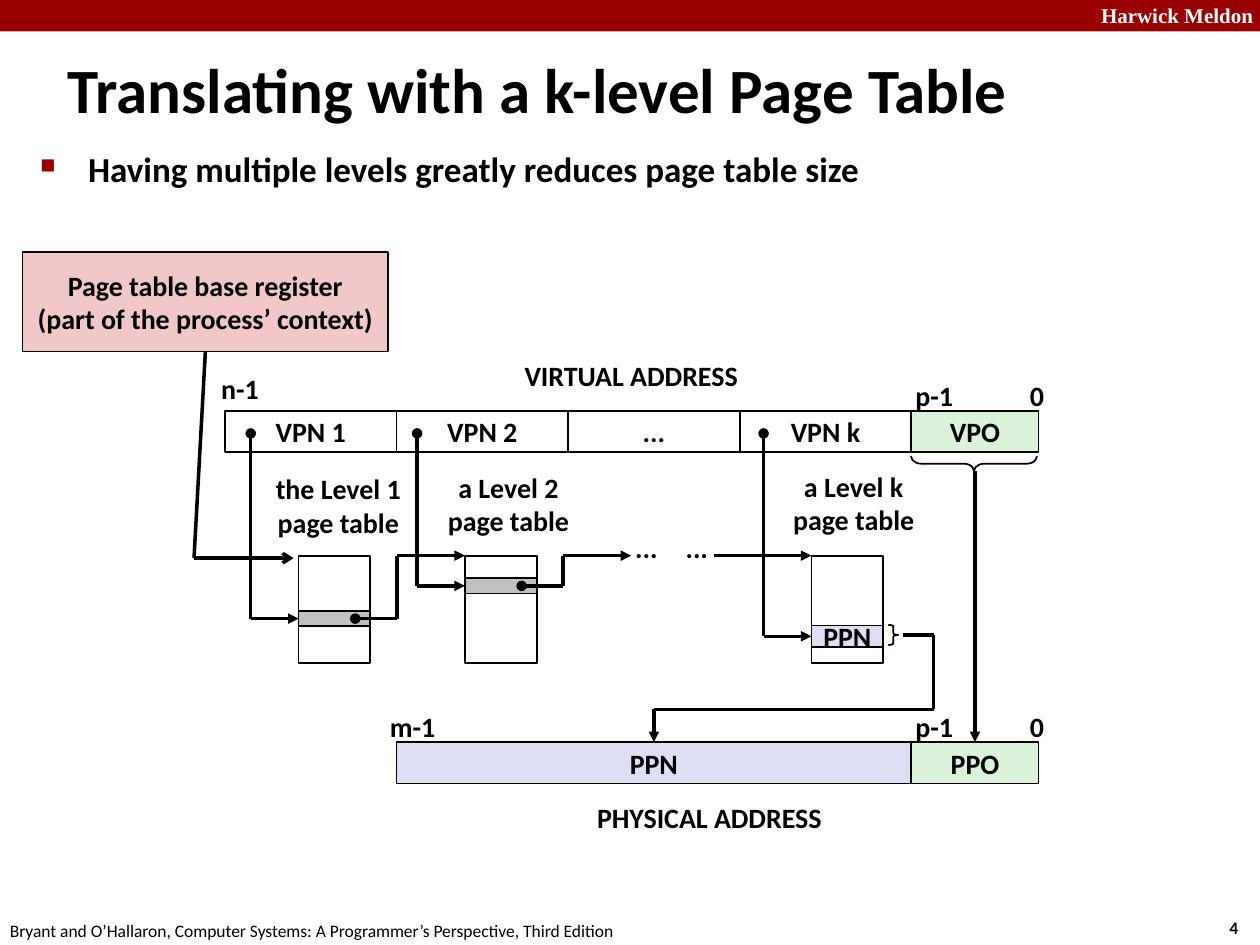
from lxml.etree import SubElement
from pptx import Presentation
from pptx.dml.color import RGBColor as RGB
from pptx.enum.shapes import MSO_CONNECTOR as Link, MSO_SHAPE as Shape
from pptx.enum.text import MSO_ANCHOR as Anchor, PP_ALIGN as Align
from pptx.oxml.ns import qn
from pptx.util import Inches, Pt

BLACK = RGB(0x00, 0x00, 0x00)
WHITE = RGB(0xFF, 0xFF, 0xFF)
RED = RGB(0x99, 0x00, 0x00)
PINK = RGB(0xF1, 0xC7, 0xC7)
GREEN = RGB(0xDB, 0xF2, 0xDA)
LILAC = RGB(0xDE, 0xDF, 0xF5)
GRAY = RGB(0xC0, 0xC0, 0xC0)

COLS, ROWS = 100, 75
TOP, LEFT, BOTTOM = 0, 1, 2


def write(frame, text, size=16, bold=True, color=BLACK, font="Calibri",
          align=Align.CENTER, anchor=Anchor.MIDDLE, wrap=False):
    """Fill a text frame, one paragraph to a line of text."""
    frame.word_wrap = wrap
    frame.vertical_anchor = anchor
    for i, line in enumerate(text.split("\n")):
        par = frame.paragraphs[0] if i == 0 else frame.add_paragraph()
        par.alignment = align
        run = par.add_run()
        run.text = line
        run.font.size, run.font.bold, run.font.name = Pt(size), bold, font
        run.font.color.rgb = color


def mark(par, char, color, size, indent):
    """Give a paragraph a hanging bullet; size is a percentage."""
    props = par._p.get_or_add_pPr()
    props.set("marL", str(indent))
    props.set("indent", str(-indent))
    tint = SubElement(props, qn("a:buClr"))
    SubElement(tint, qn("a:srgbClr"), val=str(color))
    SubElement(props, qn("a:buSzPct"), val=str(size * 1000))
    SubElement(props, qn("a:buChar"), char=char)


class Board:
    """Draws on one slide; every length is in grid columns and rows."""

    def __init__(self, deck):
        self.slide = deck.slides.add_slide(deck.slide_layouts[6])
        self.shapes = self.slide.shapes
        self.col = deck.slide_width / COLS
        self.row = deck.slide_height / ROWS

    def place(self, x, y, *size):
        spot = [x, y, *size]
        units = [self.col, self.row] * 2
        return [round(n * unit) for n, unit in zip(spot, units)]

    def box(self, x, y, w, h, text="", fill=None, line=BLACK,
            kind=Shape.RECTANGLE):
        item = self.shapes.add_shape(kind, *self.place(x, y, w, h))
        item.shadow.inherit = False
        if fill is None:
            item.fill.background()
        else:
            item.fill.solid()
            item.fill.fore_color.rgb = fill
        if line is None:
            item.line.fill.background()
        else:
            item.line.color.rgb = line
            item.line.width = Pt(1)
        if text:
            write(item.text_frame, text)
        return item

    def brace(self, x, y, w, h, curve, turn=0):
        item = self.box(x, y, w, h, kind=Shape.RIGHT_BRACE)
        item.adjustments[0] = curve
        item.rotation = turn

    def label(self, x, y, w, h, text, **style):
        item = self.shapes.add_textbox(*self.place(x, y, w, h))
        write(item.text_frame, text, **style)
        return item.text_frame

    def route(self, *points, head=None, tail=None, start=None, end=None):
        """Link points by straight lines; start and end are (shape, site)."""
        last = len(points) - 2
        for i, (a, b) in enumerate(zip(points, points[1:])):
            wire = self.shapes.add_connector(
                Link.STRAIGHT, *self.place(*a), *self.place(*b))
            wire.line.color.rgb = BLACK
            wire.line.width = Pt(2)
            if i == 0 and start:
                wire.begin_connect(*start)
            if i == last and end:
                wire.end_connect(*end)
            props = wire._element.spPr
            if i == 0 and head:
                SubElement(props.find(qn("a:ln")), qn("a:headEnd"), type=head)
            if i == last and tail:
                SubElement(props.find(qn("a:ln")), qn("a:tailEnd"), type=tail)
            SubElement(props, qn("a:effectLst"))


def frame(board):
    left = {"align": Align.LEFT}
    board.box(0, 0, 100, 2.5, fill=RED, line=None)
    board.label(86.4, -0.3, 14.3, 3, "Harwick Meldon", size=12, color=WHITE,
                font="Times New Roman", anchor=Anchor.TOP, **left)
    board.label(96.6, 72.3, 3.7, 2.7, "4", size=10, anchor=Anchor.TOP, **left)
    board.label(-0.2, 72.5, 50.8, 2.7,
                "Bryant and O’Hallaron, Computer Systems: "
                "A Programmer’s Perspective, Third Edition",
                size=10, bold=False, anchor=Anchor.TOP, **left)
    board.label(4.4, 2.7, 90.6, 8.6, "Translating with a k-level Page Table",
                size=36, wrap=True, **left)
    body = board.label(2.2, 11.8, 95.8, 9.2,
                       "Having multiple levels greatly reduces page table size",
                       size=20, wrap=True, anchor=Anchor.TOP, **left)
    par = body.paragraphs[0]
    par.line_spacing, par.space_before = 0.83, Pt(12)
    mark(par, "■", RED, 60, Inches(0.38))


def addresses(board):
    """Draw both address bars; return the physical page and offset cells."""
    start, step, high = 17.85, 13.62, 3.3
    split = start + 4 * step
    for i, name in enumerate(["VPN 1", "VPN 2", "...", "VPN k"]):
        board.box(start + i * step, 32.6, step, high, name)
    board.box(split, 32.6, 10.1, high, "VPO", GREEN)
    offset = board.box(split, 58.9, 10.1, high, "PPO", GREEN)
    page = board.box(start + step, 58.9, 3 * step, high, "PPN", LILAC)
    for y in (29.5, 55.8):
        board.label(80.7, y, 3.2, 3.7, "0")
        board.label(71.6, y, 5.1, 3.7, "p-1")
    board.label(16.5, 29, 5.1, 3.7, "n-1")
    board.label(29.9, 55.8, 5.7, 3.7, "m-1")
    board.label(40.4, 27.9, 19.4, 3.7, "VIRTUAL ADDRESS")
    board.label(45.9, 63, 20.8, 3.7, "PHYSICAL ADDRESS")
    return page, offset


def table(board, x, y, high, **entry):
    """Draw a page table whose entry, centred on y, is picked by a VPN."""
    board.box(x, 44.1, 5.7, 8.5)
    cell = board.box(x, y - high / 2, 5.7, high, **entry)
    board.route((x - 3.8, 34.4), (x - 3.8, y), (x, y),
                head="oval", tail="triangle", end=(cell, LEFT))


def tables(board):
    for x, y in ((23.7, 49.1), (36.9, 46.5)):
        table(board, x, y, 1.2, fill=GRAY)
        bend = x + 7.8
        board.route((x + 4.5, y), (bend, y), (bend, 44.1), (x + 13.2, 44.1),
                    head="oval", tail="triangle")
    table(board, 64.4, 50.5, 1.7, text="PPN", fill=LILAC)
    board.route((56.7, 44.1), (64.4, 44.1), tail="triangle")
    for x in (49.4, 53.4):
        board.label(x, 41.6, 3.8, 3.7, "...")
    for x, y, name in ((20.9, 36.9, "the Level 1"), (34.4, 36.8, "a Level 2"),
                       (61.8, 36.7, "a Level k")):
        board.label(x, y, 11.9, 6.4, name + "\npage table")


def main():
    deck = Presentation()
    deck.slide_width, deck.slide_height = Inches(10), Inches(7.5)
    board = Board(deck)
    frame(board)
    base = board.box(1.8, 20, 29, 7.9, "Page table base register\n"
                     "(part of the process’ context)", PINK)
    board.route((16.3, 27.9), (15.4, 44.3), (23.3, 44.3),
                tail="arrow", start=(base, BOTTOM))
    page, offset = addresses(board)
    tables(board)
    board.brace(76.7, 31.8, 1.2, 10, 0.68, turn=90)
    board.brace(70.5, 49.6, 0.8, 1.6, 0.16)
    board.route((77.38, 37.4), (77.38, 58.9),
                tail="triangle", end=(offset, TOP))
    board.route((71.7, 50.4), (74.1, 50.4), (74.1, 56.3), (51.9, 56.3),
                (51.9, 58.9), tail="triangle", end=(page, TOP))
    deck.save("out.pptx")


if __name__ == "__main__":
    main()
